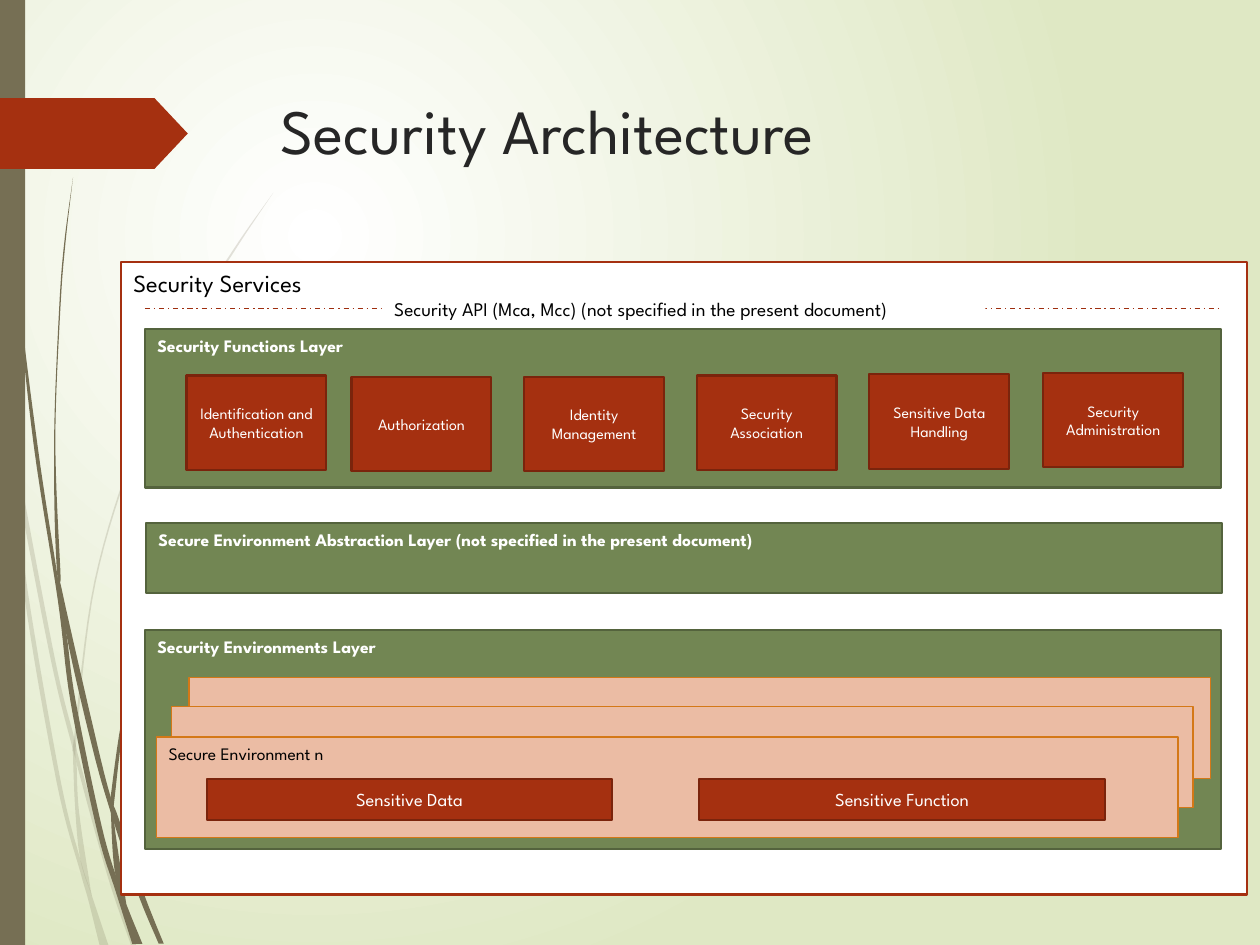
from lxml.etree import SubElement
from pptx import Presentation
from pptx.dml.color import RGBColor
from pptx.enum.dml import MSO_LINE
from pptx.enum.shapes import MSO_CONNECTOR, MSO_SHAPE
from pptx.enum.text import MSO_ANCHOR, PP_ALIGN
from pptx.oxml.ns import qn
from pptx.util import Inches, Pt

FONT = "League Spartan"
WHITE = RGBColor(0xFF, 0xFF, 0xFF)
BLACK = RGBColor(0, 0, 0)
INK = RGBColor(0x26, 0x26, 0x26)
PALE_GREEN = RGBColor(0xDF, 0xE8, 0xC4)
OLIVE = RGBColor(0x76, 0x6F, 0x54)
RED = RGBColor(0xA5, 0x30, 0x10)
RED_EDGE = RGBColor(0x7A, 0x24, 0x0C)
RULE = RGBColor(0x9E, 0x2E, 0x0F)
GREEN = RGBColor(0x72, 0x86, 0x53)
GREEN_EDGE = RGBColor(0x54, 0x63, 0x3D)
PEACH = RGBColor(0xEB, 0xBC, 0xA4)
ORANGE = RGBColor(0xD4, 0x78, 0x17)

COLS, ROWS = 1000, 750
WIDTH, HEIGHT = Inches(10), Inches(7.5)

PALE_STEMS = [
    ([(0, 299), (8, 350), (12, 376), (40, 522), (59, 599), (85, 694), (104, 750)],
     [(0, 282), (10, 345), (43, 520), (59, 586), (64, 607), (88, 692), (108, 750)]),
    ([(8, 350), (19, 470), (45, 621), (64, 693), (70, 714), (79, 750)],
     [(8, 350), (12, 376), (22, 469), (48, 619), (64, 683), (73, 711), (86, 750)]),
    ([(217, 153), (186, 197), (158, 244), (110, 348), (75, 461), (59, 584),
      (58, 599), (60, 646), (64, 683), (73, 711)],
     [(217, 153), (187, 198), (159, 245), (111, 349), (76, 462), (61, 584),
      (61, 610), (63, 646), (72, 706)]),
]
DARK_STEMS = [
    ([(2, 0), (5, 110), (14, 233), (27, 355), (46, 477), (56, 557), (77, 659),
      (92, 708), (105, 749)],
     [(3, 0), (6, 109), (15, 232), (30, 355), (45, 453), (53, 505), (60, 556),
      (81, 657), (96, 706), (113, 749)]),
    ([(58, 141), (51, 193), (47, 245), (43, 349), (45, 449), (53, 505), (73, 592),
      (88, 645), (109, 708), (126, 749)],
     [(58, 141), (52, 193), (48, 245), (44, 349), (48, 453), (50, 472), (77, 590),
      (88, 633), (94, 649), (113, 706), (130, 749)]),
    ([(215, 344), (191, 373), (168, 405), (129, 474), (101, 551), (88, 631),
      (88, 645), (91, 691), (100, 719)],
     [(216, 344), (191, 374), (169, 406), (131, 476), (103, 552), (91, 633),
      (91, 656), (100, 716)]),
]
FUNCTIONS = [
    (148, 298, "Identification and Authentication"),
    (279, 299, "Authorization"),
    (416, 299, "Identity Management"),
    (553, 298, "Security Association"),
    (690, 297, "Sensitive Data Handling"),
    (828, 296, "Security Administration"),
]
LAYERS = [
    (115, 261, 126, "Security Functions Layer"),
    (116, 415, 56, "Secure Environment Abstraction Layer (not specified in the present document)"),
    (115, 500, 174, "Security Environments Layer"),
]
ENVIRONMENTS = [(150, 538, ""), (136, 561, ""), (124, 585, "Secure Environment n")]


def grid(x, y):
    """Turn a column and a row into slide lengths."""
    return int(WIDTH * x / COLS), int(HEIGHT * y / ROWS)


def set_text(sp, text, size, color, bold=False, align=PP_ALIGN.LEFT, anchor=MSO_ANCHOR.TOP):
    """Write one formatted paragraph into a shape."""
    tf = sp.text_frame
    tf.text = text
    tf.word_wrap = True
    tf.vertical_anchor = anchor
    p = tf.paragraphs[0]
    p.alignment = align
    for r in p.runs:
        r.font.name, r.font.size, r.font.bold = FONT, Pt(size), bold
        r.font.color.rgb = color


def paint(sp, fill, line=None, width=1.25):
    """Give a shape flat fill and outline."""
    sp.shadow.inherit = False
    sp.fill.solid()
    sp.fill.fore_color.rgb = fill
    if line is None:
        sp.line.fill.background()
    else:
        sp.line.color.rgb = line
        sp.line.width = Pt(width)


def add_box(s, x, y, w, h, fill, line=None, width=1.25, kind=MSO_SHAPE.RECTANGLE):
    """Add a painted preset shape on the grid."""
    sp = s.shapes.add_shape(kind, *grid(x, y), *grid(w, h))
    paint(sp, fill, line, width)
    return sp


def add_red_box(s, x, y, w, h, text, size):
    """Add a red box with centred white text."""
    sp = add_box(s, x, y, w, h, RED, RED_EDGE)
    set_text(sp, text, size, WHITE, align=PP_ALIGN.CENTER, anchor=MSO_ANCHOR.MIDDLE)


def smooth(points, steps=8):
    """Run a Catmull-Rom curve through the points."""
    padded = [points[0], *points, points[-1]]
    curve = []
    for a, b, c, d in zip(padded, padded[1:], padded[2:], padded[3:]):
        for t in (i / steps for i in range(steps)):
            curve.append(tuple(
                (2 * q + (r - p) * t + (2 * p - 5 * q + 4 * r - u) * t ** 2
                 + (3 * q - p - 3 * r + u) * t ** 3) / 2
                for p, q, r, u in zip(a, b, c, d)))
    return curve + [points[-1]]


def add_stem(s, left, right, alpha=100):
    """Draw a grass stem between its two edges."""
    outline = [grid(x, y) for x, y in smooth(left) + smooth(right)[::-1]]
    builder = s.shapes.build_freeform(*outline[0])
    builder.add_line_segments(outline[1:], close=True)
    sp = builder.convert_to_shape()
    paint(sp, OLIVE)
    if alpha < 100:
        color = sp.fill._xPr.find(qn("a:solidFill"))[0]
        SubElement(color, qn("a:alpha"), val=str(alpha * 1000))


def add_background(s):
    """Fill the slide with a radial gradient."""
    fill = s.background.fill
    fill.gradient()
    for stop, color, position in zip(fill.gradient_stops, (WHITE, PALE_GREEN), (0, 1)):
        stop.color.rgb = color
        stop.position = position
    grad = s.element.find(".//" + qn("a:gradFill"))
    grad.remove(grad.find(qn("a:lin")))
    radial = SubElement(grad, qn("a:path"), path="circle")
    SubElement(radial, qn("a:fillToRect"), l="50000", t="50000", r="100000", b="100000")


def add_decoration(s):
    """Draw the stems, side bar and tag."""
    for left, right in PALE_STEMS:
        add_stem(s, left, right, alpha=20)
    for left, right in DARK_STEMS:
        add_stem(s, left, right)
    add_box(s, 0, 0, 20, ROWS, OLIVE)
    tag = add_box(s, 0, 78, 149, 56, RED, kind=MSO_SHAPE.PENTAGON)
    tag.adjustments[0] = 0.47


def add_title(s, text):
    """Place and format the title."""
    sp = s.shapes.title
    sp.left, sp.top = grid(213, 68)
    sp.width, sp.height = grid(721, 140)
    set_text(sp, text, 36, INK)


def add_api_line(s):
    """Draw the dashed API boundary and its label."""
    line = s.shapes.add_connector(MSO_CONNECTOR.STRAIGHT, *grid(115, 245), *grid(969, 245))
    line.line.color.rgb = RULE
    line.line.width = Pt(0.75)
    line.line.dash_style = MSO_LINE.DASH_DOT
    SubElement(line.element.spPr, qn("a:effectLst"))
    label = add_box(s, 303, 231, 479, 29, WHITE)
    set_text(label, "Security API (Mca, Mcc) (not specified in the present document)", 11, BLACK)


def main():
    """Build the slide."""
    prs = Presentation()
    prs.slide_width, prs.slide_height = WIDTH, HEIGHT
    s = prs.slides.add_slide(prs.slide_layouts[5])
    add_background(s)
    add_decoration(s)
    add_title(s, "Security Architecture")
    set_text(add_box(s, 96, 208, 894, 502, WHITE, RED), "Security Services", 14, BLACK)
    add_api_line(s)
    for x, y, h, text in LAYERS:
        set_text(add_box(s, x, y, 854, h, GREEN, GREEN_EDGE), text, 10, WHITE, bold=True)
    for x, y, text in FUNCTIONS:
        add_red_box(s, x, y, 111, 75, text, 9)
    for x, y, text in ENVIRONMENTS:
        set_text(add_box(s, x, y, 811, 80, PEACH, ORANGE, 0.75), text, 10, BLACK)
    for x, text in ((164, "Sensitive Data"), (555, "Sensitive Function")):
        add_red_box(s, x, 618, 322, 33, text, 10.5)
    prs.save("out.pptx")


if __name__ == "__main__":
    main()
